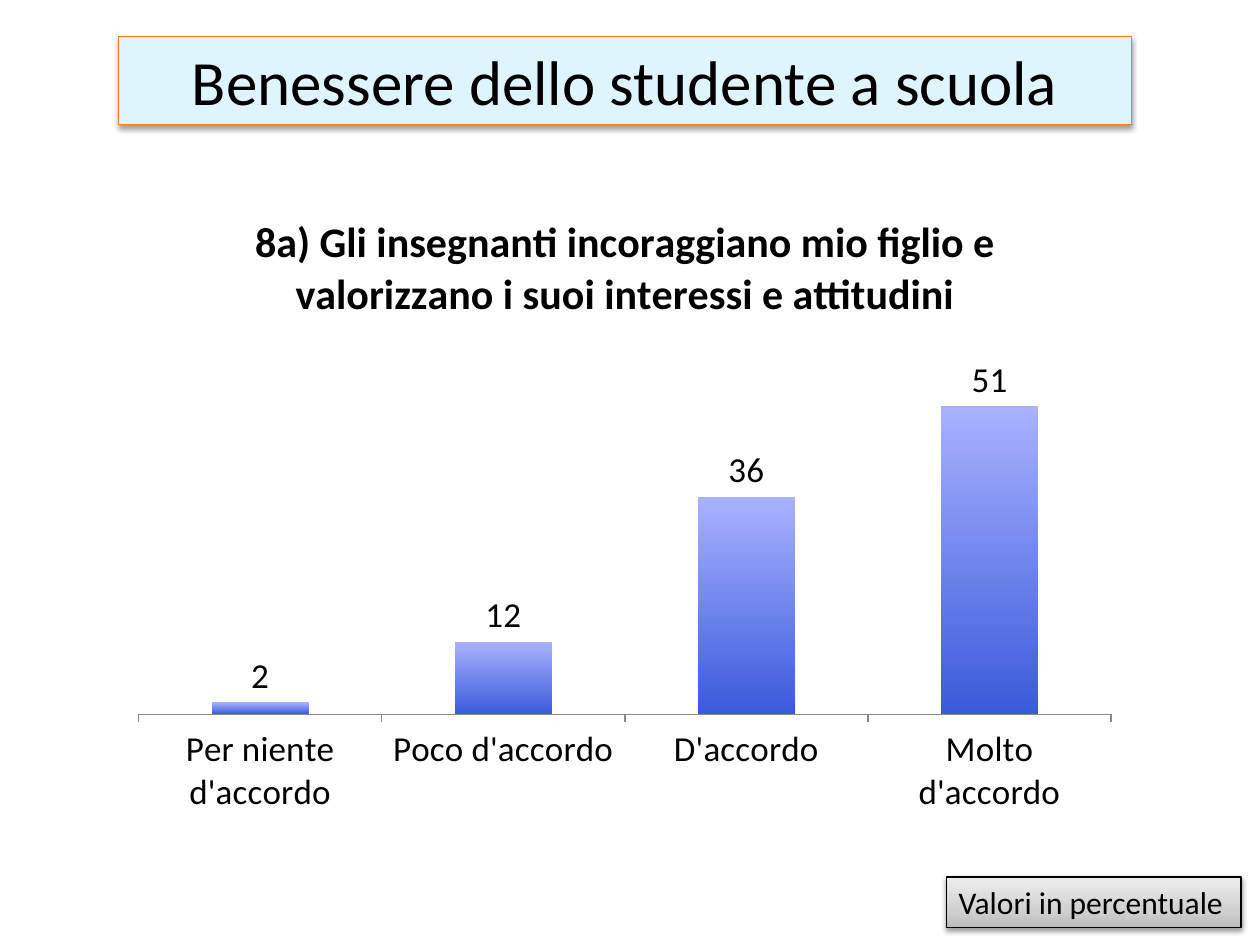
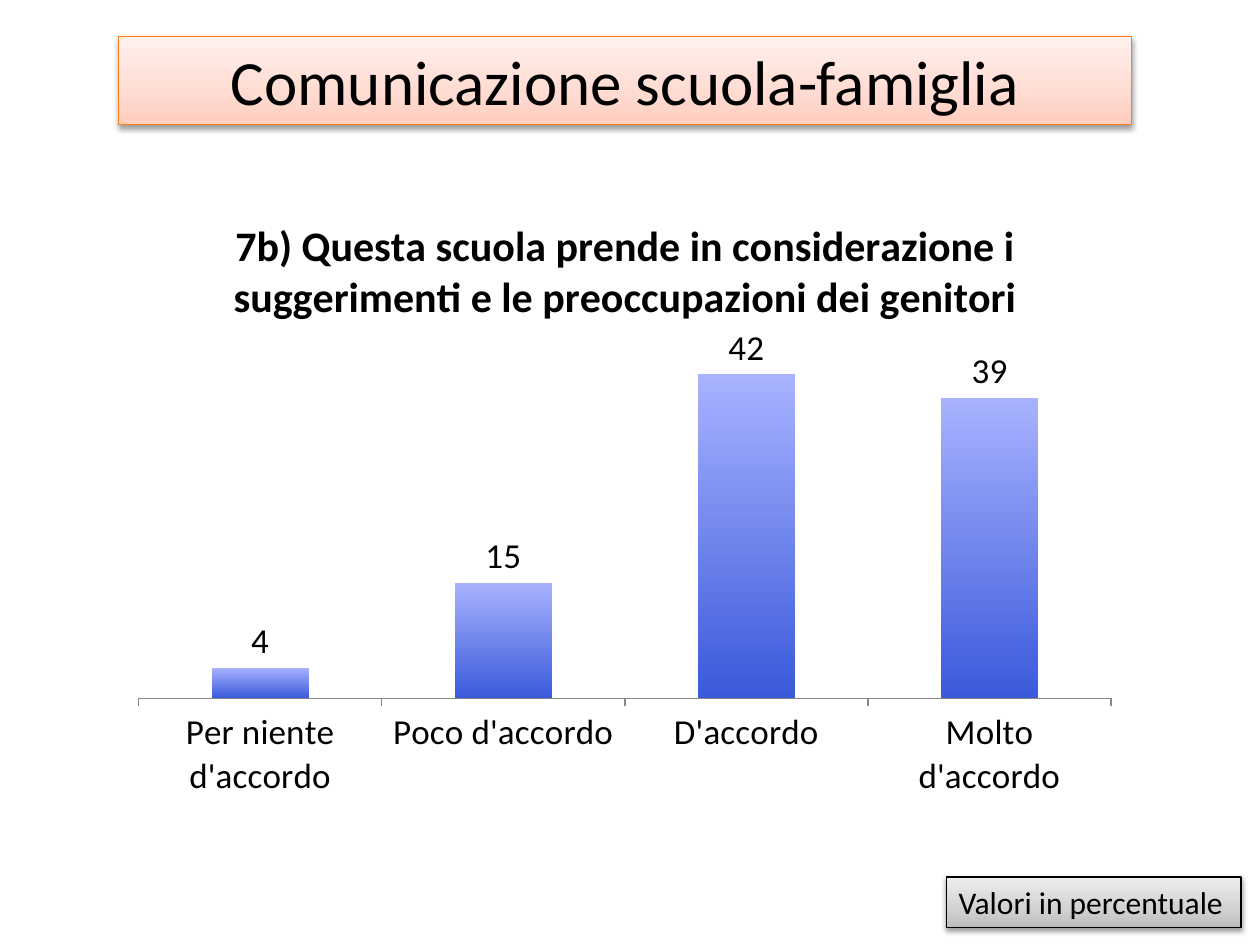
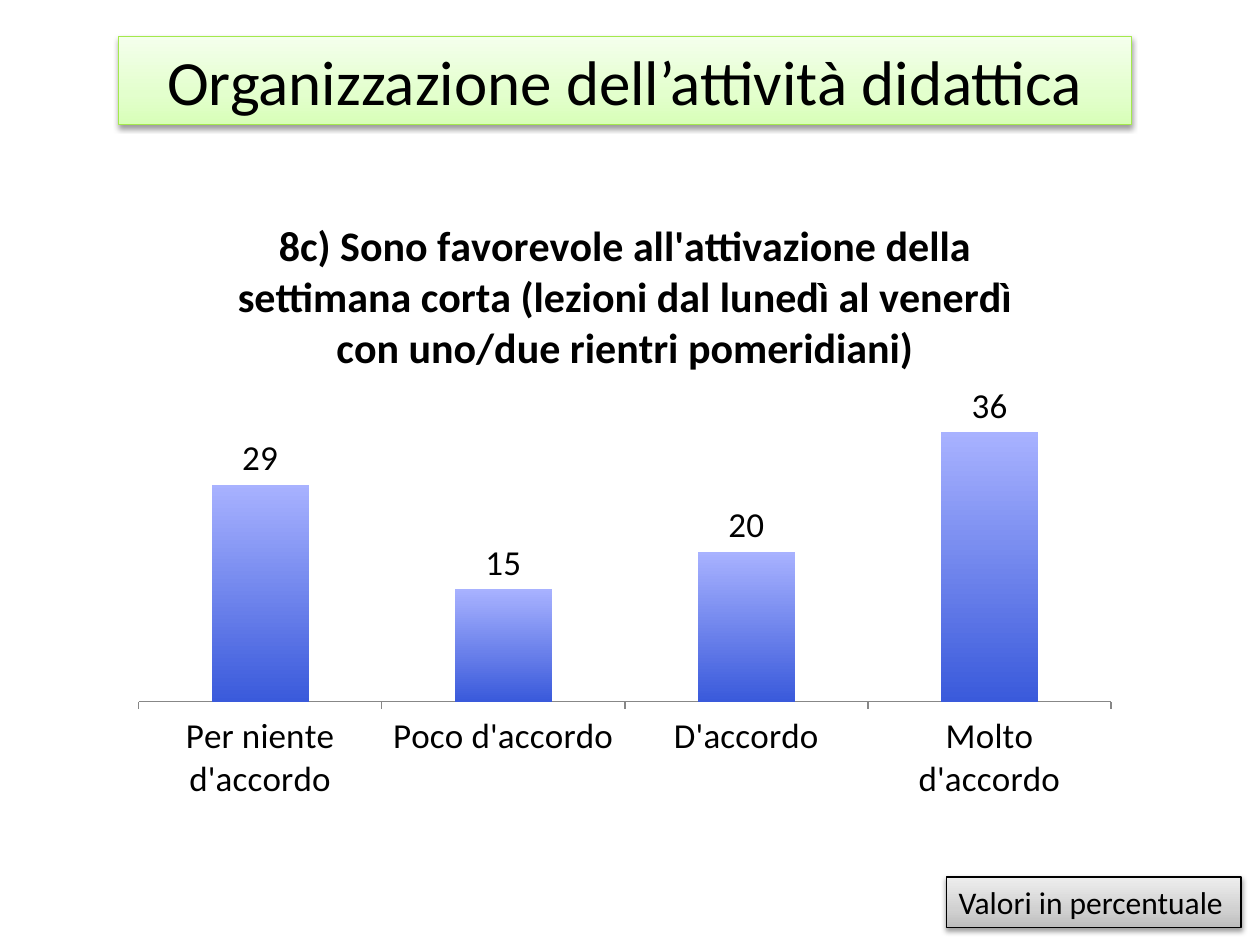
from dataclasses import dataclass

from lxml import etree
from pptx import Presentation
from pptx.chart.data import CategoryChartData
from pptx.dml.color import RGBColor
from pptx.enum.chart import XL_CHART_TYPE, XL_LABEL_POSITION, XL_TICK_LABEL_POSITION, XL_TICK_MARK
from pptx.enum.shapes import MSO_SHAPE
from pptx.enum.text import MSO_ANCHOR, MSO_AUTO_SIZE, PP_ALIGN
from pptx.oxml import parse_xml
from pptx.oxml.ns import nsdecls, qn
from pptx.util import Inches, Pt

COLUMN = XL_CHART_TYPE.COLUMN_CLUSTERED
OUTSIDE = XL_TICK_MARK.OUTSIDE
LOW = XL_TICK_LABEL_POSITION.LOW
ABOVE = XL_LABEL_POSITION.OUTSIDE_END
RECT = MSO_SHAPE.RECTANGLE
MIDDLE = MSO_ANCHOR.MIDDLE
FIT = MSO_AUTO_SIZE.SHAPE_TO_FIT_TEXT
LEFT, CENTER = PP_ALIGN.LEFT, PP_ALIGN.CENTER

# Shared style
FONT = "Calibri"
BLACK, AXIS, ORANGE, LIME = "000000", "878787", "FF7C1B", "A4E94C"
SKY = [(0, "DFF5FD")]
PEACH = [(0, "FFCDBD"), (35, "FFDBD1"), (100, "FFF1EE")]
GREEN = [(0, "D8FFB8"), (35, "E3FFCD"), (100, "F4FFEC")]
GRAY = [(0, "BDBDBD"), (35, "D1D1D1"), (100, "EEEEEE")]
BLUE = [(0, "3A5ADB"), (100, "A8B2FF")]
SIDE, WIDE = 0.94, 8.04
ANSWERS = ["Per niente d'accordo", "Poco d'accordo", "D'accordo", "Molto d'accordo"]


@dataclass
class Box:
    left: float
    top: float
    width: float
    height: float

    def place(self) -> list:
        return [Inches(n) for n in (self.left, self.top, self.width, self.height)]


@dataclass
class Page:
    title: str
    stops: list
    edge: str
    query: str
    values: list
    area: Box
    limit: int
    plot: tuple  # top and height, as shares of the chart


PAGES = [
    Page("Benessere dello studente a scuola", SKY, ORANGE,
         "8a) Gli insegnanti incoraggiano mio figlio e valorizzano i suoi interessi e attitudini",
         [2, 12, 36, 51], Box(SIDE, 1.48, WIDE, 5.05), 60, (0.26, 0.57)),
    Page("Comunicazione scuola-famiglia", PEACH, ORANGE,
         "7b) Questa scuola prende in considerazione i suggerimenti e le preoccupazioni dei genitori",
         [4, 15, 42, 39], Box(SIDE, 1.51, WIDE, 4.92), 45, (0.26, 0.56)),
    Page("Organizzazione dell’attività didattica", GREEN, LIME,
         "8c) Sono favorevole all'attivazione della settimana corta "
         "(lezioni dal lunedì al venerdì con uno/due rientri pomeridiani)",
         [29, 15, 20, 36], Box(SIDE, 1.51, WIDE, 4.95), 40, (0.34, 0.48)),
]
HEAD = Box(SIDE, 0.29, WIDE, 0.7)
NOTE = Box(7.51, 6.96, 2.34, 0.4)


def color(code: str) -> RGBColor:
    return RGBColor.from_string(code)


def style(font, size: float, bold: bool = False) -> None:
    font.name, font.size, font.bold = FONT, Pt(size), bold
    font.color.rgb = color(BLACK)


def paint(item, fill, stops: list) -> None:
    """Fill with one colour, or with a gradient that rises from the bottom."""
    fill.solid()
    fill.fore_color.rgb = color(stops[0][1])
    if len(stops) == 1:
        return
    marks = "".join(f'<a:gs pos="{pos * 1000}"><a:srgbClr val="{code}"/></a:gs>'
                    for pos, code in stops)
    solid = item.xpath(".//a:solidFill")[0]
    solid.getparent().replace(solid, parse_xml(
        f'<a:gradFill {nsdecls("a")} rotWithShape="1"><a:gsLst>{marks}</a:gsLst>'
        '<a:lin ang="16200000" scaled="0"/></a:gradFill>'))


def shade(shape) -> None:
    shape.shadow.inherit = False
    glow = shape._element.spPr.find(qn("a:effectLst"))
    glow.append(parse_xml(
        f'<a:outerShdw {nsdecls("a")} blurRad="{Pt(3.1)}" dist="{Pt(1.6)}" dir="5400000" '
        'rotWithShape="0"><a:srgbClr val="000000"><a:alpha val="38000"/></a:srgbClr>'
        '</a:outerShdw>'))


def panel(slide, box: Box, stops: list, edge: str, text: str, size: float, align):
    shape = slide.shapes.add_shape(RECT, *box.place())
    paint(shape._element, shape.fill, stops)
    shape.line.color.rgb = color(edge)
    shape.line.width = Pt(0.75)
    shade(shape)
    frame = shape.text_frame
    frame.vertical_anchor = MIDDLE
    para = frame.paragraphs[0]
    para.alignment = align
    run = para.add_run()
    run.text = text
    style(run.font, size)
    return frame


def layout(chart, top: float, height: float) -> None:
    """Fix the inner plot area."""
    area = chart._chartSpace.chart.plotArea
    for old in area.findall(qn("c:layout")):
        area.remove(old)
    node = etree.Element(qn("c:layout"))
    spot = etree.SubElement(node, qn("c:manualLayout"))
    parts = [("layoutTarget", "inner"), ("xMode", "edge"), ("yMode", "edge"),
             ("x", 0.02), ("y", top), ("w", 0.96), ("h", height)]
    for name, value in parts:
        etree.SubElement(spot, qn(f"c:{name}")).set("val", str(value))
    area.insert(0, node)


def graph(slide, page: Page) -> None:
    data = CategoryChartData(number_format="0")
    data.categories = ANSWERS
    data.add_series(page.query, page.values)
    chart = slide.shapes.add_chart(COLUMN, *page.area.place(), data).chart
    style(chart.font, 20)
    chart.has_legend = False

    # Question
    chart.has_title = True
    run = chart.chart_title.text_frame.paragraphs[0].add_run()
    run.text = page.query
    style(run.font, 24, True)
    chart.chart_title.include_in_layout = False

    # Axes
    scale = chart.value_axis
    scale.minimum_scale, scale.maximum_scale = 0, page.limit
    scale.has_major_gridlines = False
    scale.visible = False
    base = chart.category_axis
    base.major_tick_mark = OUTSIDE
    base.tick_label_position = LOW
    base.format.line.color.rgb = color(AXIS)
    base.format.line.width = Pt(0.75)

    # Columns and labels
    plot = chart.plots[0]
    plot.gap_width = 150
    plot.vary_by_categories = False
    series = plot.series[0]
    paint(series._element, series.format.fill, BLUE)
    plot.has_data_labels = True
    labels = plot.data_labels
    labels.show_value = True
    labels.number_format, labels.number_format_is_linked = "0", False
    labels.position = ABOVE
    style(labels.font, 20)
    layout(chart, *page.plot)


def main() -> None:
    deck = Presentation()
    deck.slide_width, deck.slide_height = Inches(10), Inches(7.5)
    for page in PAGES:
        slide = deck.slides.add_slide(deck.slide_layouts[6])
        panel(slide, HEAD, page.stops, page.edge, page.title, 36, CENTER)
        note = panel(slide, NOTE, GRAY, BLACK, "Valori in percentuale", 18, LEFT)
        note.word_wrap = False
        note.auto_size = FIT
        graph(slide, page)
    deck.save("out.pptx")


if __name__ == "__main__":
    main()
